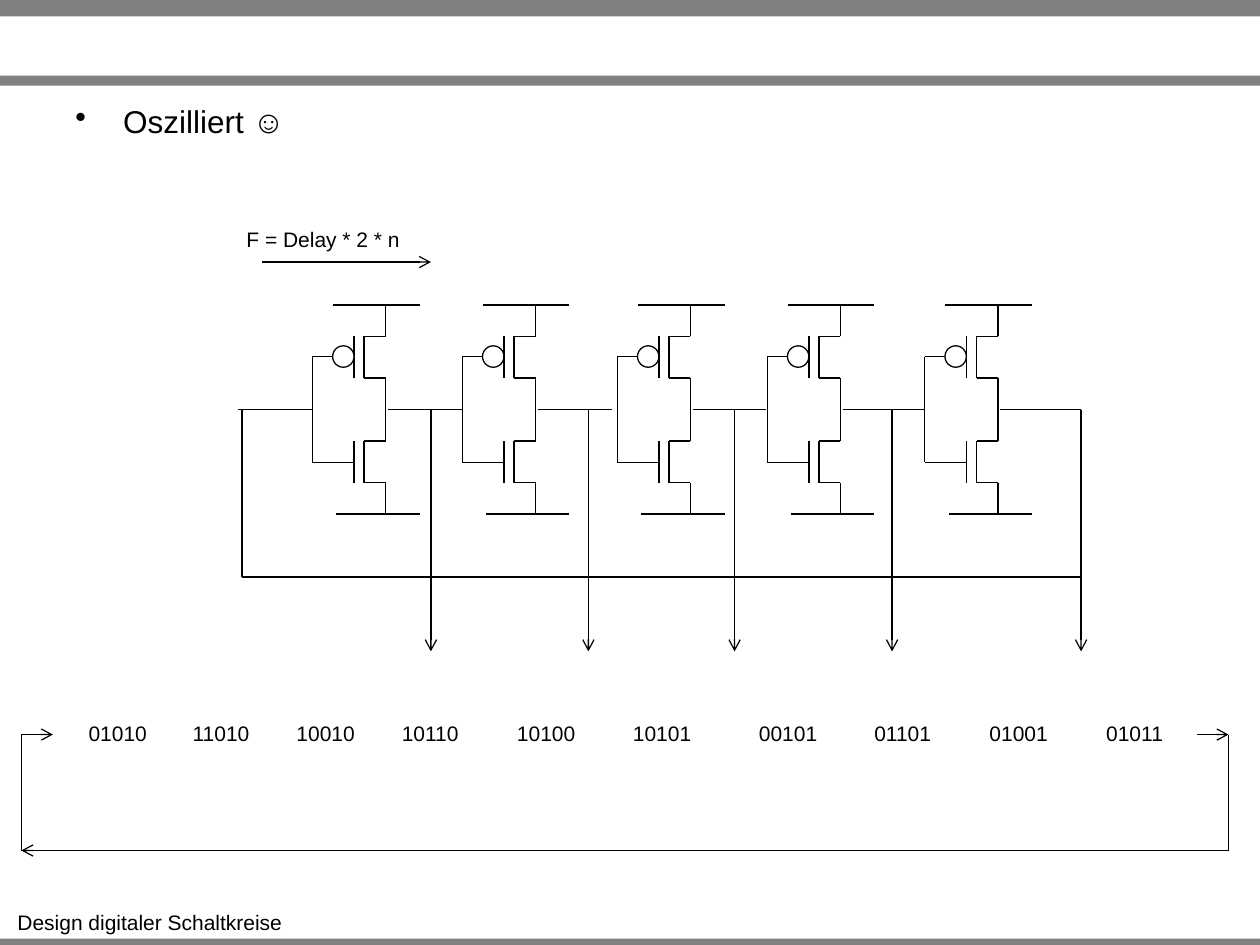
import pptx
import pptx.dml.color
import pptx.enum.shapes
import pptx.enum.text
import pptx.oxml
import pptx.oxml.ns
import pptx.util
from dataclasses import dataclass

Inches = pptx.util.Inches
ALIGN = pptx.enum.text.PP_ALIGN
SHAPE = pptx.enum.shapes.MSO_SHAPE


@dataclass
class Theme:
    font: str = "Arial"
    ink: str = "000000"
    paper: str = "FFFFFF"
    bar: str = "808080"
    body_size: int = 18
    label_size: int = 12
    line_width: float = 0.75


def rgb(value):
    return pptx.dml.color.RGBColor.from_string(value)


def set_all(target, values):
    for name, value in values.items():
        setattr(target, name, value)


def add_xml(parent, tag, **attributes):
    element = pptx.oxml.parse_xml(f"<{tag} {pptx.oxml.ns.nsdecls('a')}/>")
    for name, value in attributes.items():
        element.set(name, value)
    parent.append(element)


class Slide:
    def __init__(self, prs, theme):
        self.theme = theme
        self.shapes = prs.slides.add_slide(prs.slide_layouts[6]).shapes

    def shape(self, kind, box, fill, outline=None, parent=None):
        sp = (parent or self.shapes).add_shape(kind, *map(Inches, box))
        sp.shadow.inherit = False
        sp.fill.solid()
        sp.fill.fore_color.rgb = rgb(fill)
        if outline:
            self.stroke(sp.line)
        else:
            sp.line.fill.background()

    def stroke(self, line):
        line.color.rgb = rgb(self.theme.ink)
        line.width = pptx.util.Pt(self.theme.line_width)

    def line(self, x1, y1, x2, y2, arrow=False, parent=None):
        cxn = (parent or self.shapes).add_connector(
            pptx.enum.shapes.MSO_CONNECTOR.STRAIGHT, *map(Inches, (x1, y1, x2, y2)))
        self.stroke(cxn.line)
        if arrow:
            add_xml(cxn.line._get_or_add_ln(), "a:tailEnd", type="arrow")
        add_xml(cxn._element.spPr, "a:effectLst")

    def text(self, text, box, size, wrap=False, align=ALIGN.CENTER, bullet=False):
        tf = self.shapes.add_textbox(*map(Inches, box)).text_frame
        tf.word_wrap = wrap
        p = tf.paragraphs[0]
        p.alignment = align
        if bullet:
            pPr = p._p.get_or_add_pPr()
            indent = Inches(0.38)
            pPr.set("marL", str(indent))
            pPr.set("indent", str(-indent))
            add_xml(pPr, "a:buChar", char="•")
        r = p.add_run()
        r.text = text
        set_all(r.font, {"name": self.theme.font, "size": pptx.util.Pt(size)})
        r.font.color.rgb = rgb(self.theme.ink)

    def label(self, text, x, y, width):
        self.text(text, (x, y, width, 0.3), self.theme.label_size)

    def transistor(self, x, y, side, bubble):
        """Draw from the output node (x, y) to the rail; side is -1 up, 1 down."""
        group = self.shapes.add_group_shape().shapes
        drain, gate, source, rail = (y + side * d for d in (0.25, 0.42, 0.58, 0.83))
        channel, plate, stub, entry = (x - d for d in (0.17, 0.25, 0.42, 0.58))
        for ends in (
            (x, source, channel, source),
            (channel, source, channel, drain),
            (stub, gate, plate, gate),
            (plate, source, plate, drain),
            (x, drain, channel, drain),
            (x, drain, x, y),
            (x, rail, x, source),
            (stub, gate, entry, gate),
        ):
            self.line(*ends, parent=group)
        if bubble:
            size = plate - stub
            self.shape(SHAPE.OVAL, (stub, gate - size / 2, size, size),
                       self.theme.paper, outline=True, parent=group)

    def inverter(self, x, y):
        for side, rail_start in ((1, 0.39), (-1, 0.42)):
            rail = y + side * 0.83
            self.line(x - rail_start, rail, x + 0.27, rail)
            self.transistor(x, y, side, bubble=side < 0)
        self.line(x - 0.58, y - 0.42, x - 0.58, y + 0.42)


def main():
    prs = pptx.Presentation()
    set_all(prs, {"slide_width": Inches(10), "slide_height": Inches(7.5)})
    theme = Theme()
    s = Slide(prs, theme)

    for top, height in ((7.45, 0.05), (0, 0.13), (0.6, 0.08)):
        s.shape(SHAPE.RECTANGLE, (0, top, 10, height), theme.bar)
    s.label("Design digitaler Schaltkreise", 0.03, 7.17, 2.32)
    s.text("Oszilliert ☺", (0.5, 0.76, 9, 0.99), theme.body_size,
           wrap=True, align=ALIGN.LEFT, bullet=True)

    # Ring oscillator
    node_y, feedback_y, left, right = 3.25, 4.58, 1.92, 8.58
    outputs = (3.06, 4.25, 5.48, 6.67, 7.92)
    for x in outputs:
        s.inverter(x, node_y)
    wire_starts = [1.89] + [x + 0.02 for x in outputs]
    wire_ends = (2.48, 3.67, 4.86, 6.08, 7.33, right)
    for start, end in zip(wire_starts, wire_ends):
        s.line(end, node_y, start, node_y)
    s.line(right, node_y, right, feedback_y)
    s.line(right, feedback_y, left, feedback_y)
    s.line(left, feedback_y, left, node_y)
    for tap in (3.42, 4.67, 5.83, 7.08, right):
        s.line(tap, node_y, tap, 5.17, arrow=True)

    s.label("F = Delay * 2 * n", 1.85, 1.75, 1.43)
    s.line(2.08, 2.08, 3.42, 2.08, arrow=True)

    # Cycle of states
    states = {"01010": 0.6, "11010": 1.42, "10010": 2.25, "10110": 3.08, "10100": 4,
              "10101": 4.92, "00101": 5.92, "01101": 6.83, "01001": 7.75, "01011": 8.67}
    for state, x in states.items():
        s.label(state, x, 5.67, 0.67)
    state_y, return_y, first, last = 5.83, 6.75, 0.17, 9.75
    s.line(last - 0.25, state_y, last, state_y, arrow=True)
    s.line(last, return_y, last, state_y)
    s.line(last, return_y, first, return_y, arrow=True)
    s.line(first, return_y, first, state_y)
    s.line(first, state_y, first + 0.25, state_y, arrow=True)

    prs.save("out.pptx")


if __name__ == "__main__":
    main()
